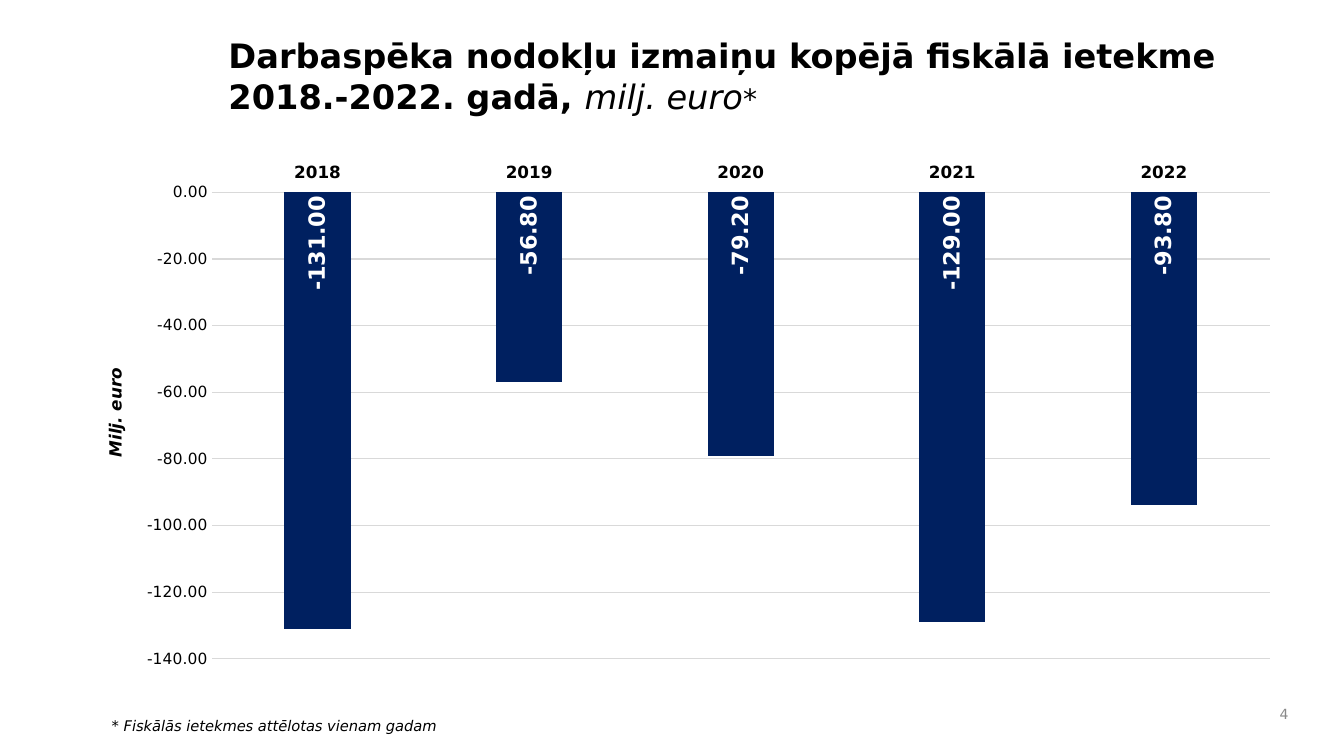
from dataclasses import dataclass
from pptx import Presentation
from pptx.chart.data import CategoryChartData as Data
from pptx.dml.color import RGBColor as Color
from pptx.enum.chart import XL_CHART_TYPE as Kind
from pptx.enum.chart import XL_LABEL_POSITION as Spot
from pptx.enum.chart import XL_TICK_LABEL_POSITION as Side
from pptx.enum.chart import XL_TICK_MARK as Tick
from pptx.enum.text import MSO_ANCHOR as Anchor, MSO_AUTO_SIZE as Fit, PP_ALIGN as Align
from pptx.oxml import parse_xml
from pptx.oxml.ns import nsdecls, qn
from pptx.util import Pt


@dataclass
class Theme:
    font: str = "DejaVu Sans"
    ink: str = "000000"
    white: str = "FFFFFF"
    navy: str = "002060"
    grid: str = "D9D9D9"
    gray: str = "898989"
    head: float = 24
    star: float = 20
    label: float = 16
    year: float = 12
    scale: float = 11
    base: float = 10
    note: float = 10.5


def style(font, face, size, color, bold=False, slant=False):
    font.name = face
    font.size = Pt(size)
    font.bold = bold
    font.italic = slant
    font.color.rgb = Color.from_string(color)


def place(node, area, inner=False):
    old = node.find(qn("c:layout"))
    spot = 0 if old is None else node.index(old)
    if old is not None:
        node.remove(old)
    rows = '<c:layoutTarget val="inner"/>' if inner else ""
    names = "xywh"[:len(area)]
    rows += "".join(f'<c:{key}Mode val="edge"/>' for key in names[:2])
    rows += "".join(f'<c:{key} val="{size}"/>' for key, size in zip(names, area))
    node.insert(spot, parse_xml(
        f'<c:layout {nsdecls("c")}><c:manualLayout>{rows}</c:manualLayout></c:layout>'))


def turn(body):
    body.set("rot", "-5400000")
    body.set("vert", "horz")


class Page:
    def __init__(self, deck, theme):
        self.theme = theme
        self.slide = deck.slides.add_slide(deck.slide_layouts[5])

    def put(self, line, text, size, color=None, **form):
        run = line.add_run()
        run.text = text
        style(run.font, self.theme.font, size, color or self.theme.ink, **form)

    def title(self, box, parts):
        shape = self.slide.shapes.title
        shape.left, shape.top, shape.width, shape.height = map(Pt, box)
        frame = shape.text_frame
        frame.word_wrap = True
        frame.auto_size = Fit.NONE
        frame.vertical_anchor = Anchor.TOP
        line = frame.paragraphs[0]
        line.alignment = Align.LEFT
        for text, size, form in parts:
            self.put(line, text, size, **form)

    def text(self, box, text, size, align=Align.LEFT, anchor=Anchor.TOP, **form):
        frame = self.slide.shapes.add_textbox(*map(Pt, box)).text_frame
        frame.word_wrap = True
        frame.vertical_anchor = anchor
        line = frame.paragraphs[0]
        line.alignment = align
        self.put(line, text, size, **form)

    def chart(self, box, years, sums, unit):
        look = self.theme
        data = Data(number_format="0.00")
        data.categories = years
        data.add_series("Series 1", sums)
        chart = self.slide.shapes.add_chart(
            Kind.COLUMN_CLUSTERED, *map(Pt, box), data).chart
        chart.has_legend = False
        chart.has_title = False
        style(chart.font, look.font, look.base, look.ink)
        self.bars(chart.plots[0])
        self.axes(chart, unit)
        place(chart.element.xpath(".//c:plotArea")[0], (0.112, 0.058, 0.876, 0.87), True)
        turn(chart.element.xpath(".//c:dLbls/c:txPr/a:bodyPr")[0])

    def bars(self, plot):
        look = self.theme
        plot.gap_width = 219
        plot.overlap = -27
        plot.vary_by_categories = False
        bars = plot.series[0]
        bars.invert_if_negative = False
        bars.format.fill.solid()
        bars.format.fill.fore_color.rgb = Color.from_string(look.navy)
        labels = bars.data_labels
        labels.show_value = True
        labels.position = Spot.INSIDE_BASE
        labels.number_format = "0.00"
        labels.number_format_is_linked = False
        style(labels.font, look.font, look.label, look.white, bold=True)

    def axes(self, chart, unit):
        look = self.theme
        top, side = chart.category_axis, chart.value_axis
        for axis in top, side:
            axis.major_tick_mark = axis.minor_tick_mark = Tick.NONE
        top.tick_label_position = Side.HIGH
        style(top.tick_labels.font, look.font, look.year, look.ink, bold=True)
        side.has_major_gridlines = True
        for line in top.format.line, side.major_gridlines.format.line:
            line.color.rgb = Color.from_string(look.grid)
            line.width = Pt(0.75)
        side.minimum_scale, side.maximum_scale, side.major_unit = -140, 0, 20
        side.format.line.fill.background()
        side.tick_labels.number_format = "0.00"
        side.tick_labels.number_format_is_linked = False
        style(side.tick_labels.font, look.font, look.scale, look.ink)
        frame = side.axis_title.text_frame
        self.put(frame.paragraphs[0], unit, look.year, bold=True, slant=True)
        name = chart.element.xpath(".//c:valAx/c:title")[0]
        turn(name.xpath(".//a:bodyPr")[0])
        place(name, (0.02, 0.38))


def main():
    deck = Presentation()
    deck.slide_width, deck.slide_height = Pt(960), Pt(540)
    theme = Theme()
    page = Page(deck, theme)
    page.title((156, 21.6, 750, 76.3), [
        ("Darbaspēka nodokļu izmaiņu kopējā fiskālā ietekme 2018.-2022. gadā, ",
         theme.head, {"bold": True}),
        ("milj. euro", theme.head, {"slant": True}),
        ("*", theme.star, {"slant": True}),
    ])
    page.text((883.4, 498.2, 44, 23.8), "4", theme.base, align=Align.RIGHT,
              anchor=Anchor.MIDDLE, color=theme.gray)
    page.chart((54.7, 115.2, 862.6, 383), ["2018", "2019", "2020", "2021", "2022"],
               [-131, -56.8, -79.2, -129, -93.8], "Milj. euro")
    page.text((72.7, 508.3, 625.7, 20.9), "* Fiskālās ietekmes attēlotas vienam gadam",
              theme.note, slant=True)
    deck.save("out.pptx")


if __name__ == "__main__":
    main()
